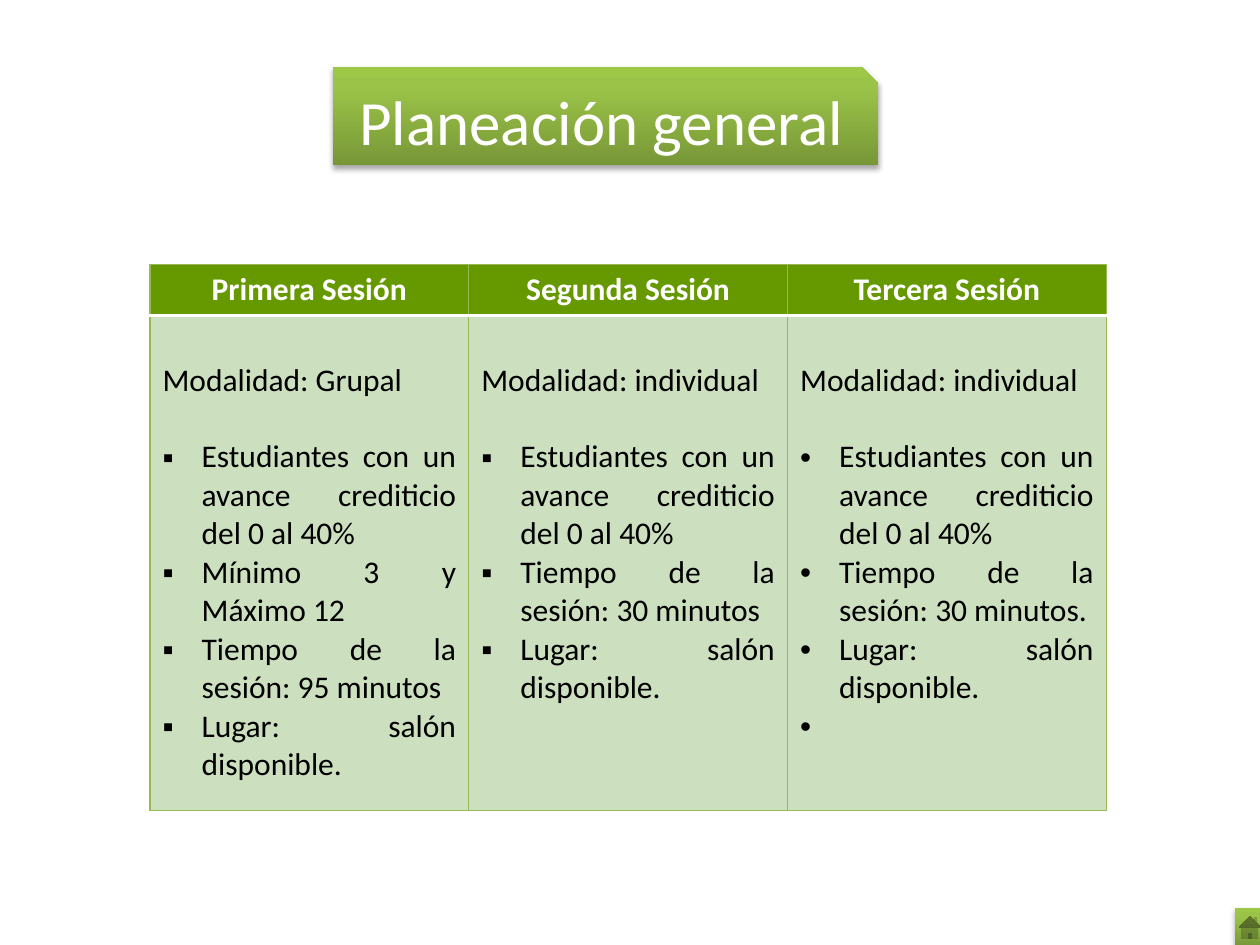
import pptx
import pptx.util
import pptx.oxml
import pptx.oxml.ns
import pptx.dml.color
import pptx.enum.shapes
import pptx.enum.text

COLORS = {
    "header": "669900", "body": "CCDFBF", "border": "98B955",
    "white": "FFFFFF", "black": "000000",
    "dark": "779737", "mid": "9BC348", "light": "9DC746",
}
NS = pptx.oxml.ns.nsdecls("a")
ALIGN = pptx.enum.text.PP_ALIGN
SHAPE = pptx.enum.shapes.MSO_SHAPE

prs = pptx.Presentation()
prs.slide_width = W = pptx.util.Inches(10)
prs.slide_height = H = pptx.util.Inches(7.5)
s = prs.slides.add_slide(prs.slide_layouts[6])


def write(p, text, size=18, color="black", bold=False, align=ALIGN.JUSTIFY, before=0, bullet=None):
    p.alignment = align
    p.space_before = pptx.util.Pt(before)
    r = p.add_run()
    r.text = text
    r.font.name = "Calibri"
    r.font.size = pptx.util.Pt(size)
    r.font.bold = bold
    r.font.color.rgb = pptx.dml.color.RGBColor.from_string(COLORS[color])
    if bullet:
        pPr = p._p.get_or_add_pPr()
        indent = pptx.util.Inches(0.31)
        pPr.set("marL", str(indent))
        pPr.set("indent", str(-indent))
        pPr.append(pptx.oxml.parse_xml(f'<a:buFont {NS} typeface="Arial"/>'))
        pPr.append(pptx.oxml.parse_xml(f'<a:buChar {NS} char="{bullet}"/>'))


credits = "Estudiantes con un avance crediticio del 0 al 40%"
place = "Lugar: salón disponible."
sessions = [
    ("Primera Sesión", "Modalidad: Grupal", "▪",
     [credits, "Mínimo 3 y Máximo 12", "Tiempo de la sesión: 95 minutos", place]),
    ("Segunda Sesión", "Modalidad: individual", "▪",
     [credits, "Tiempo de la sesión: 30 minutos", place]),
    ("Tercera Sesión", "Modalidad: individual", "•",
     [credits, "Tiempo de la sesión: 30 minutos.", place, "\t"]),
]

rows = [int(H * 0.053), int(H * 0.524)]
table = s.shapes.add_table(2, len(sessions), int(W * 0.119), int(H * 0.28),
                           int(W * 0.759), sum(rows)).table
for row, height in zip(table.rows, rows):
    row.height = height

for col, (title, mode, bullet, items) in enumerate(sessions):
    head, body = table.cell(0, col), table.cell(1, col)
    write(head.text_frame.paragraphs[0], title, color="white", bold=True, align=ALIGN.CENTER)
    body.margin_top = pptx.util.Inches(0.36)
    tf = body.text_frame
    write(tf.paragraphs[0], mode)
    for i, item in enumerate(items):
        write(tf.add_paragraph(), item, bullet=bullet, before=0 if i else 22)
    for cell, fill, white_side in ((head, "header", "B"), (body, "body", "T")):
        cell.fill.solid()
        cell.fill.fore_color.rgb = pptx.dml.color.RGBColor.from_string(COLORS[fill])
        tcPr = cell._tc.get_or_add_tcPr()
        for i, side in enumerate("LRTB"):
            color, width = ("white", 2) if side == white_side else ("border", 0.75)
            tcPr.insert(i, pptx.oxml.parse_xml(
                f'<a:ln{side} {NS} w="{pptx.util.Pt(width)}"><a:solidFill>'
                f'<a:srgbClr val="{COLORS[color]}"/></a:solidFill></a:ln{side}>'))

stops = "".join(f'<a:gs pos="{pos * 1000}"><a:srgbClr val="{COLORS[name]}"/></a:gs>'
                for pos, name in ((0, "dark"), (80, "mid"), (100, "light")))
for kind, x, y, w, h, text in (
    (SHAPE.SNIP_1_RECTANGLE, 0.264, 0.071, 0.433, 0.104, "Planeación general"),
    (SHAPE.ACTION_BUTTON_HOME, 0.98, 0.961, 0.024, 0.041, None),
):
    sp = s.shapes.add_shape(kind, int(W * x), int(H * y), int(W * w), int(H * h))
    sp.line.fill.background()
    sp.fill.background()
    sp.shadow.inherit = False
    spPr = sp._element.spPr
    spPr.replace(spPr.find(pptx.oxml.ns.qn("a:noFill")), pptx.oxml.parse_xml(
        f'<a:gradFill {NS} rotWithShape="1"><a:gsLst>{stops}</a:gsLst>'
        '<a:lin ang="16200000" scaled="0"/></a:gradFill>'))
    spPr.find(pptx.oxml.ns.qn("a:effectLst")).append(pptx.oxml.parse_xml(
        f'<a:outerShdw {NS} blurRad="40000" dist="23000" dir="5400000" rotWithShape="0">'
        f'<a:srgbClr val="{COLORS["black"]}"><a:alpha val="35000"/></a:srgbClr></a:outerShdw>'))
    if text:
        tf = sp.text_frame
        tf.word_wrap = True
        tf.vertical_anchor = pptx.enum.text.MSO_ANCHOR.MIDDLE
        write(tf.paragraphs[0], text, size=36, color="white", align=ALIGN.CENTER)

prs.save("out.pptx")
